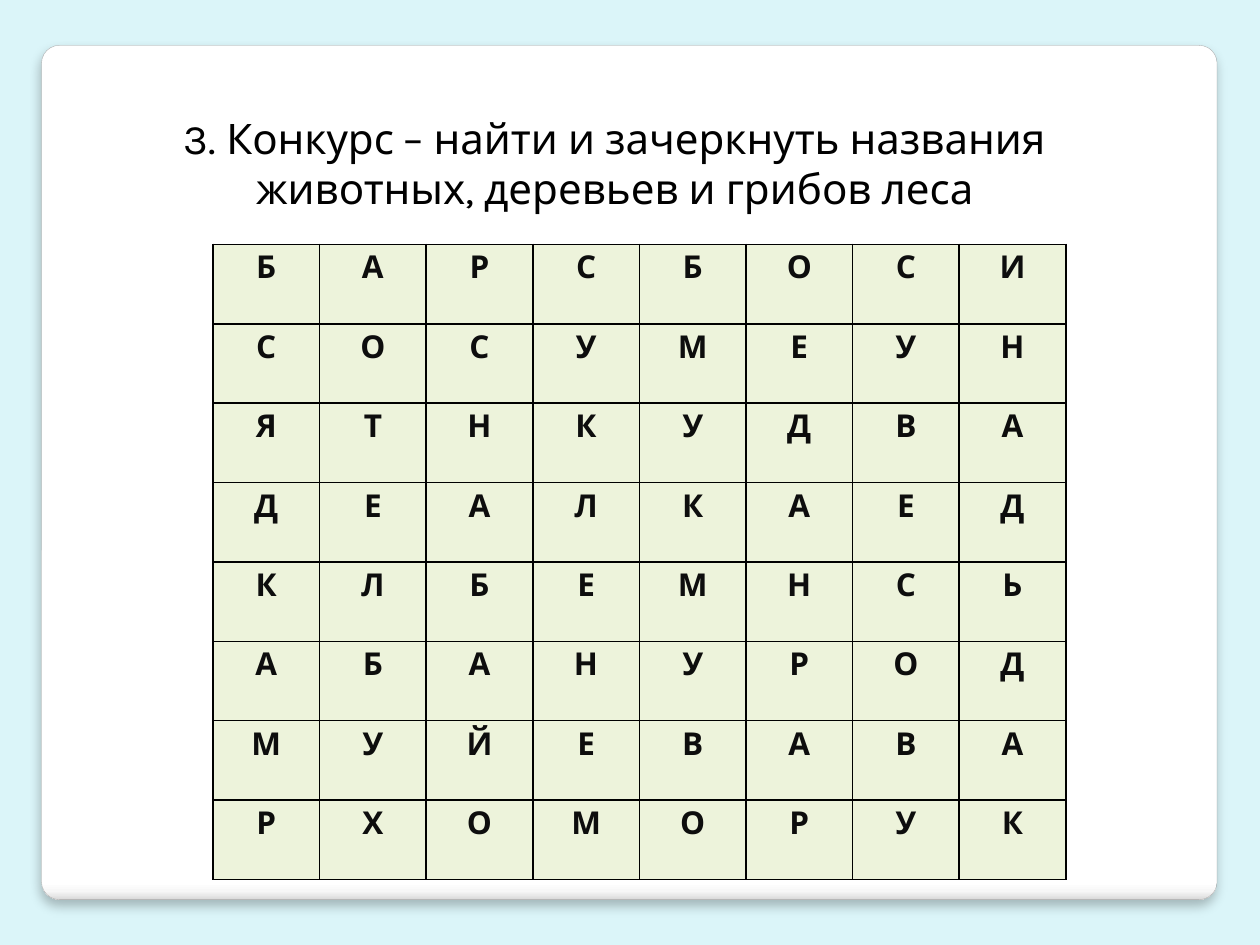
from lxml import etree
from pptx import Presentation
from pptx.dml.color import RGBColor
from pptx.enum.shapes import MSO_SHAPE
from pptx.enum.text import MSO_AUTO_SIZE, PP_ALIGN
from pptx.oxml.ns import qn
from pptx.util import Inches, Pt

ROUND_RECT = MSO_SHAPE.ROUNDED_RECTANGLE
CENTER = PP_ALIGN.CENTER
GROW = MSO_AUTO_SIZE.SHAPE_TO_FIT_TEXT

FONT = "Karla"
TITLE = "3. Конкурс – найти и зачеркнуть названия животных, деревьев и грибов леса"
LETTERS = [
    "БАРСБОСИ",
    "СОСУМЕУН",
    "ЯТНКУДВА",
    "ДЕАЛКАЕД",
    "КЛБЕМНСЬ",
    "АБАНУРОД",
    "МУЙЕВАВА",
    "РХОМОРУК",
]
PANEL_STOPS = [(0, "FFFFFF"), (98, "FFFFFF"), (99, "F7F7F7"), (100, "DADADA")]
CELL_MARGINS = {
    "margin_left": Inches(0.08),
    "margin_right": Inches(0.08),
    "margin_top": 0,
    "margin_bottom": 0,
}
LETTER_PARAGRAPH = {"alignment": CENTER, "line_spacing": 1.15, "space_after": Pt(10)}


def rgb(color):
    return RGBColor.from_string(color)


def set_attributes(obj, values):
    for name, value in values.items():
        setattr(obj, name, value)


def add_xml(parent, tag, **attributes):
    element = etree.SubElement(parent, qn(tag))
    for name, value in attributes.items():
        element.set(name, str(value))
    return element


def add_line(parent, tag, color, width):
    """Append a solid line, as used for cell borders and letter outlines."""
    line = add_xml(parent, tag, w=Pt(width))
    add_xml(add_xml(line, "a:solidFill"), "a:srgbClr", val=color)
    return line


def add_run(p, text, size, color, bold=False):
    r = p.add_run()
    r.text = text
    set_attributes(r.font, {"name": FONT, "size": Pt(size), "bold": bold})
    r.font.color.rgb = rgb(color)
    return r


def add_panel(slide, left, top, width, height):
    s = slide.shapes.add_shape(ROUND_RECT, left, top, width, height)
    s.adjustments[0] = 0.021
    s.line.color.rgb = rgb("A4A4A4")
    s.line.width = Pt(0.16)

    s.fill.gradient()
    s.fill.gradient_angle = 270
    sp_pr = s._element.spPr
    stops = sp_pr.find(qn("a:gradFill")).find(qn("a:gsLst"))
    for stop in list(stops):
        stops.remove(stop)
    for percent, color in PANEL_STOPS:
        stop = add_xml(stops, "a:gs", pos=percent * 1000)
        add_xml(stop, "a:srgbClr", val=color)

    s.shadow.inherit = False
    shadow = add_xml(sp_pr.find(qn("a:effectLst")), "a:outerShdw", blurRad=Pt(6),
                     dist=Pt(4), dir=90 * 60000, algn="t", rotWithShape=0)
    add_xml(add_xml(shadow, "a:srgbClr", val="000000"), "a:alpha", val=25000)


def add_title(slide, left, top, width, height):
    tf = slide.shapes.add_textbox(left, top, width, height).text_frame
    set_attributes(tf, {"word_wrap": True, "auto_size": GROW})
    p = tf.paragraphs[0]
    p.alignment = CENTER
    add_run(p, TITLE, 24, "000000")


def fill_letter_cell(cell, letter):
    set_attributes(cell, CELL_MARGINS)
    p = cell.text_frame.paragraphs[0]
    set_attributes(p, LETTER_PARAGRAPH)
    r = add_run(p, letter, 18, "0D0D0D", bold=True)
    r_pr = r.font._element
    r_pr.insert(0, add_line(r_pr, "a:ln", "00A578", 0.71))

    tc_pr = cell._tc.get_or_add_tcPr()
    for side in "LRTB":
        add_line(tc_pr, f"a:ln{side}", "000000", 1)
    cell.fill.solid()
    cell.fill.fore_color.rgb = rgb("EDF3DB")


def add_letter_grid(slide, left, top, width, height):
    rows, cols = len(LETTERS), len(LETTERS[0])
    table = slide.shapes.add_table(rows, cols, left, top, width, height).table
    set_attributes(table, {"first_row": False, "horz_banding": False})
    for i, word in enumerate(LETTERS):
        for j, letter in enumerate(word):
            fill_letter_cell(table.cell(i, j), letter)


def main():
    prs = Presentation()
    prs.slide_width, prs.slide_height = Inches(10), Inches(7.5)
    slide = prs.slides.add_slide(prs.slide_layouts[6])
    slide.background.fill.solid()
    slide.background.fill.fore_color.rgb = rgb("DBF5F9")
    add_panel(slide, Inches(0.33), Inches(0.36), Inches(9.33), Inches(6.78))
    add_title(slide, Inches(1.06), Inches(0.84), Inches(7.64), Inches(0.91))
    add_letter_grid(slide, Inches(1.69), Inches(1.94), Inches(6.77), Inches(5.04))
    prs.save("out.pptx")


if __name__ == "__main__":
    main()
